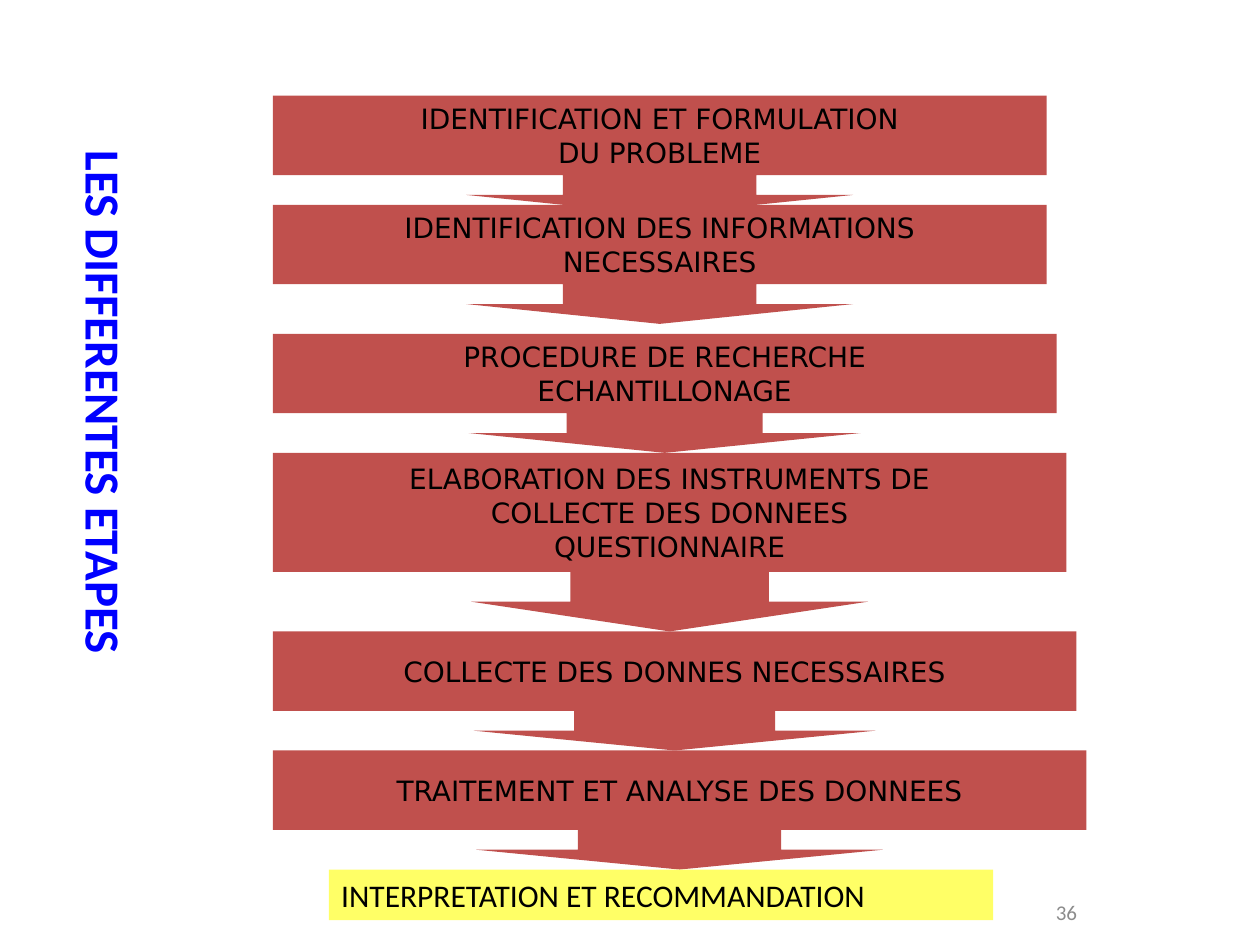
from dataclasses import dataclass

from pptx import Presentation
from pptx.dml.color import RGBColor
from pptx.enum.shapes import MSO_SHAPE as Shape
from pptx.enum.text import MSO_ANCHOR as Anchor, PP_ALIGN as Align
from pptx.util import Cm, Pt


@dataclass(frozen=True)
class Theme:
    step_fill: str = "C0504D"
    result_fill: str = "FFFF66"
    text: str = "000000"
    title: str = "0000FF"
    number: str = "8C8C8C"
    body_font: str = "Calibri"
    step_font: str = "DejaVu Sans"
    title_size: int = 28
    result_size: int = 18
    step_size: int = 16
    number_size: int = 12


THEME = Theme()

STEP_LEFT = 5.5
# Top, width and height in cm, then the lines of text
STEPS = [
    (1.93, 15.6, 2.4, ["IDENTIFICATION ET FORMULATION", "DU PROBLEME"]),
    (4.13, 15.6, 2.4, ["IDENTIFICATION DES INFORMATIONS", "NECESSAIRES"]),
    (6.73, 15.8, 2.4, ["PROCEDURE DE RECHERCHE", "ECHANTILLONAGE"]),
    (9.13, 16.0, 3.6, ["ELABORATION DES INSTRUMENTS DE",
                       "COLLECTE DES DONNEES", "QUESTIONNAIRE"]),
    (12.73, 16.2, 2.4, ["COLLECTE DES DONNES NECESSAIRES"]),
    (15.13, 16.4, 2.4, ["TRAITEMENT ET ANALYSE DES DONNEES"]),
]


def write_text(shape, lines, *, size, color=THEME.text, font=THEME.body_font,
               bold=False, align=Align.LEFT, anchor=Anchor.TOP, wrap=True):
    frame = shape.text_frame
    frame.word_wrap = wrap
    frame.vertical_anchor = anchor
    frame.text = "\n".join(lines)
    for paragraph in frame.paragraphs:
        paragraph.alignment = align
        style = paragraph.runs[0].font
        style.name, style.size, style.bold = font, Pt(size), bold
        style.color.rgb = RGBColor.from_string(color)


def add_filled_shape(slide, kind, left, top, width, height, fill):
    shape = slide.shapes.add_shape(kind, Cm(left), Cm(top), Cm(width), Cm(height))
    shape.shadow.inherit = False
    shape.fill.solid()
    shape.fill.fore_color.rgb = RGBColor.from_string(fill)
    shape.line.fill.background()
    return shape


def add_step(slide, top, width, height, lines):
    callout = add_filled_shape(slide, Shape.DOWN_ARROW_CALLOUT,
                               STEP_LEFT, top, width, height, THEME.step_fill)
    # The shaft is a quarter of the width, the arrowhead a half
    quarter = width / height / 4
    for index, value in enumerate((quarter, quarter, 1 / 6, 2 / 3)):
        callout.adjustments[index] = value
    write_text(callout, lines, size=THEME.step_size, font=THEME.step_font,
               align=Align.CENTER, anchor=Anchor.MIDDLE, wrap=False)


def add_result(slide, text):
    box = add_filled_shape(slide, Shape.RECTANGLE, 6.63, 17.53, 13.39, 1.02,
                           THEME.result_fill)
    write_text(box, [text], size=THEME.result_size)


def add_vertical_title(slide, text):
    box = slide.shapes.add_textbox(Cm(1.14), Cm(2.79), Cm(1.7), Cm(16.26))
    write_text(box, [text], size=THEME.title_size, color=THEME.title, bold=True)
    box.text_frame._txBody.bodyPr.set("vert", "eaVert")


def add_slide_number(slide, text):
    box = slide.shapes.add_textbox(Cm(18.54), Cm(17.75), Cm(5.92), Cm(1.27))
    write_text(box, [text], size=THEME.number_size, color=THEME.number,
               align=Align.CENTER, anchor=Anchor.MIDDLE)


def main():
    presentation = Presentation()
    presentation.slide_width, presentation.slide_height = Cm(25.4), Cm(19.05)
    slide = presentation.slides.add_slide(presentation.slide_layouts[6])

    # Page number
    add_slide_number(slide, "36")

    # Chain of steps and its result
    for step in STEPS:
        add_step(slide, *step)
    add_result(slide, "INTERPRETATION ET RECOMMANDATION")

    # Title along the left edge
    add_vertical_title(slide, "LES DIFFERENTES ETAPES")

    presentation.save("out.pptx")


if __name__ == "__main__":
    main()
